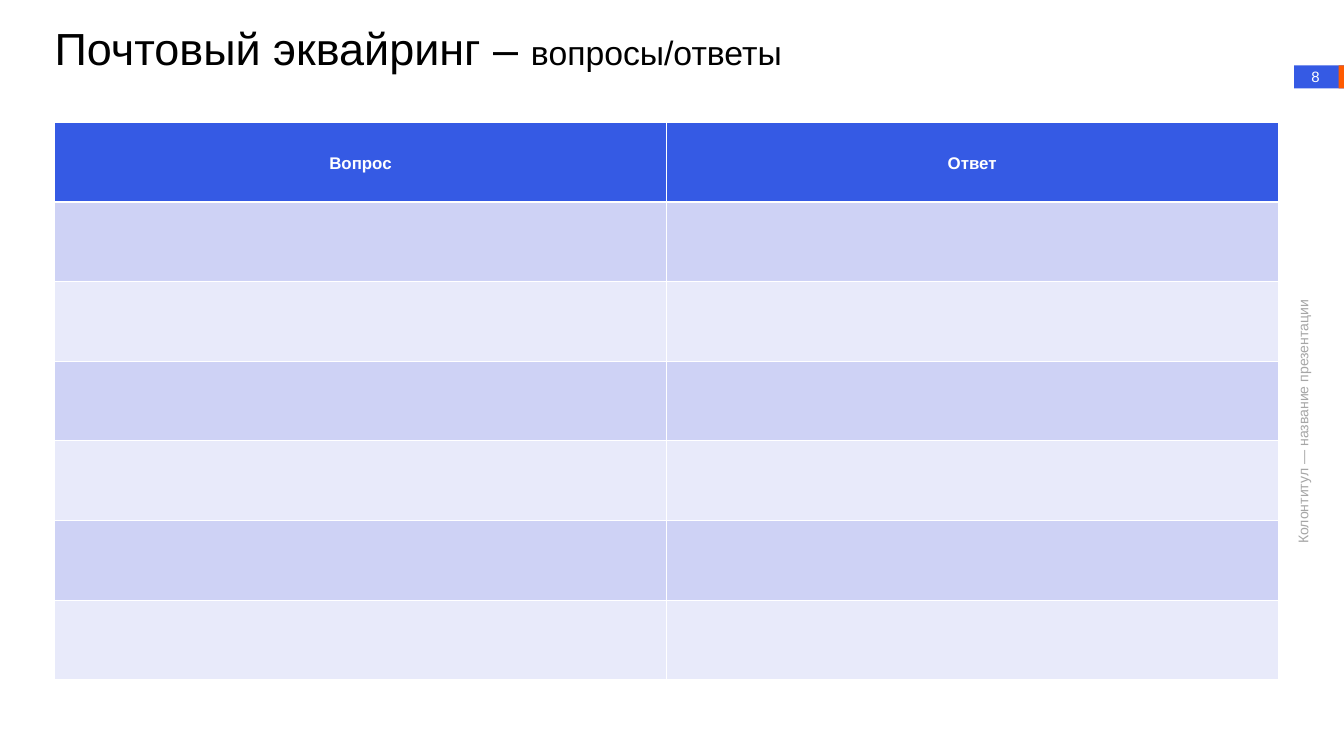
import pptx
import pptx.dml.color
import pptx.enum.shapes
import pptx.enum.text
import pptx.oxml
import pptx.oxml.ns
import pptx.util

THEME = {
    "font": "Arial",
    "blue": "355AE4", "orange": "FF5A00", "white": "FFFFFF", "black": "000000",
    "grey": "A6A6A6", "band_dark": "CED2F5", "band_light": "E8EAFA",
    "title": 48, "subtitle": 36, "header": 18, "page": 16, "running": 15,
}
ALIGN = pptx.enum.text.PP_ALIGN
ANCHOR = pptx.enum.text.MSO_ANCHOR

deck = pptx.Presentation()
deck.slide_width = pptx.util.Inches(19.92)
deck.slide_height = pptx.util.Inches(11.18)
slide = deck.slides.add_slide(deck.slide_layouts[6])


def area(left, top, width, height):
    """Turn percentages of the slide into lengths."""
    across, down = deck.slide_width / 100, deck.slide_height / 100
    return [round(v) for v in (left * across, top * down, width * across, height * down)]


def write(paragraph, text, size, color, bold=False):
    run = paragraph.add_run()
    run.text = text
    look = {"name": THEME["font"], "size": pptx.util.Pt(THEME[size]), "bold": bold}
    for key, value in look.items():
        setattr(run.font, key, value)
    run.font.color.rgb = pptx.dml.color.RGBColor.from_string(THEME[color])


# Page marker at the right edge
for place, color in [((96.29, 8.68, 3.71, 3.04), "blue"), ((99.6, 8.68, 0.4, 3.04), "orange")]:
    marker = slide.shapes.add_shape(pptx.enum.shapes.MSO_SHAPE.RECTANGLE, *area(*place))
    marker.shadow.inherit = False
    marker.fill.solid()
    marker.fill.fore_color.rgb = pptx.dml.color.RGBColor.from_string(THEME[color])
    marker.line.fill.background()

# Running title, page number and title
no_margins = dict.fromkeys(("margin_left", "margin_top", "margin_right", "margin_bottom"), 0)
labels = [
    ((80.17, 54.38, 33.53, 3.13), 270, ALIGN.CENTER, {},
     [("Колонтитул — название презентации", "running", "grey")]),
    ((96.23, 8.68, 3.31, 3.04), 0, ALIGN.CENTER,
     {**no_margins, "vertical_anchor": ANCHOR.MIDDLE}, [("8", "page", "white")]),
    ((4.07, 2.77, 83.48, 11.72), 0, ALIGN.LEFT, no_margins,
     [("Почтовый эквайринг – ", "title", "black"), ("вопросы/ответы", "subtitle", "black")]),
]
for place, rotation, alignment, frame_format, pieces in labels:
    label = slide.shapes.add_textbox(*area(*place))
    label.rotation = rotation
    for key, value in {"word_wrap": True, **frame_format}.items():
        setattr(label.text_frame, key, value)
    line = label.text_frame.paragraphs[0]
    line.alignment = alignment
    for piece in pieces:
        write(line, *piece)

# Question and answer table
headings = ["Вопрос", "Ответ"]
row_count = 7
questions = slide.shapes.add_table(
    row_count, len(headings), *area(4.07, 16.19, 91.02, 73.97)).table
for row in range(row_count):
    for column, heading in enumerate(headings):
        cell = questions.cell(row, column)

        # Borders, thicker under the header
        widths = {"lnL": 1, "lnR": 1, "lnT": 3 if row == 1 else 1, "lnB": 3 if row == 0 else 1}
        for side, width in widths.items():
            cell._tc.get_or_add_tcPr().append(pptx.oxml.parse_xml(
                f'<a:{side} {pptx.oxml.ns.nsdecls("a")} w="{pptx.util.Pt(width)}">'
                f'<a:solidFill><a:srgbClr val="{THEME["white"]}"/></a:solidFill></a:{side}>'))

        # Header and alternating bands
        band = "blue" if row == 0 else "band_dark" if row % 2 else "band_light"
        cell.fill.solid()
        cell.fill.fore_color.rgb = pptx.dml.color.RGBColor.from_string(THEME[band])
        if row == 0:
            caption = cell.text_frame.paragraphs[0]
            caption.alignment = ALIGN.CENTER
            caption.line_spacing = 2.5
            write(caption, heading, "header", "white", bold=True)

deck.save("out.pptx")
